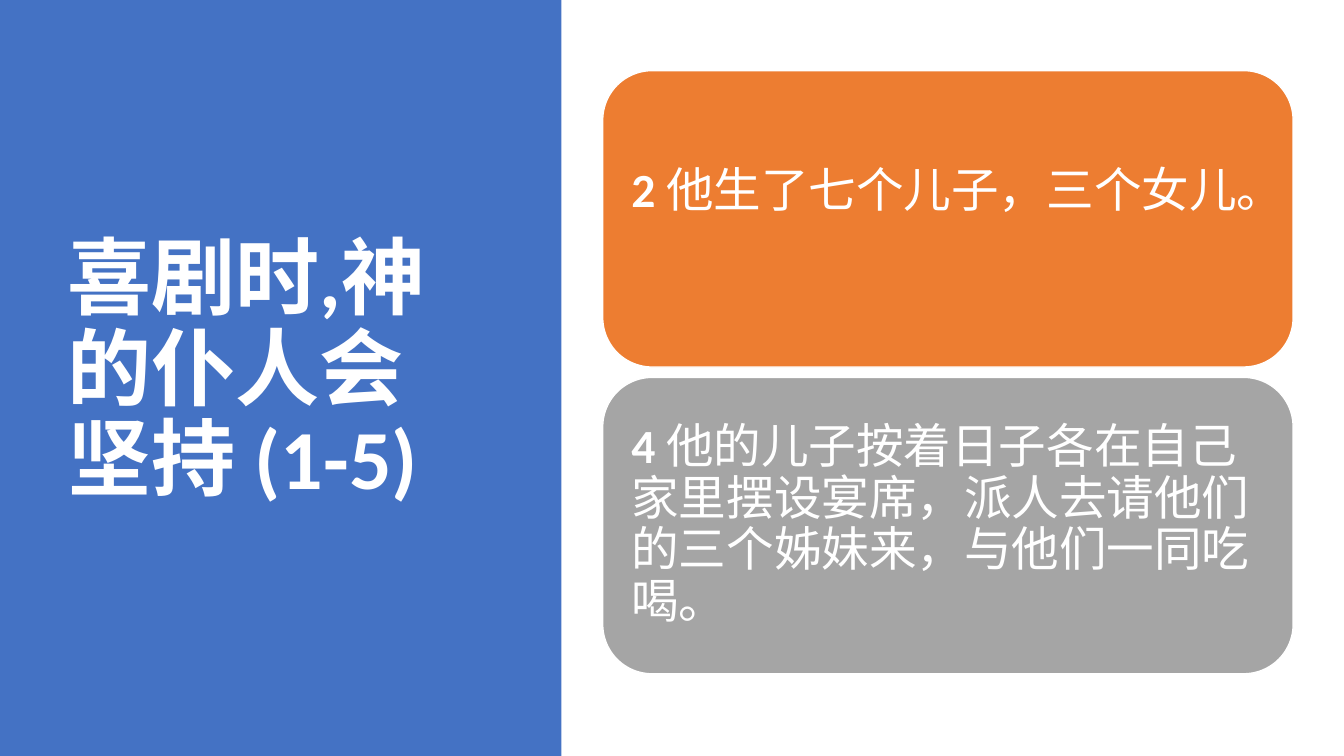
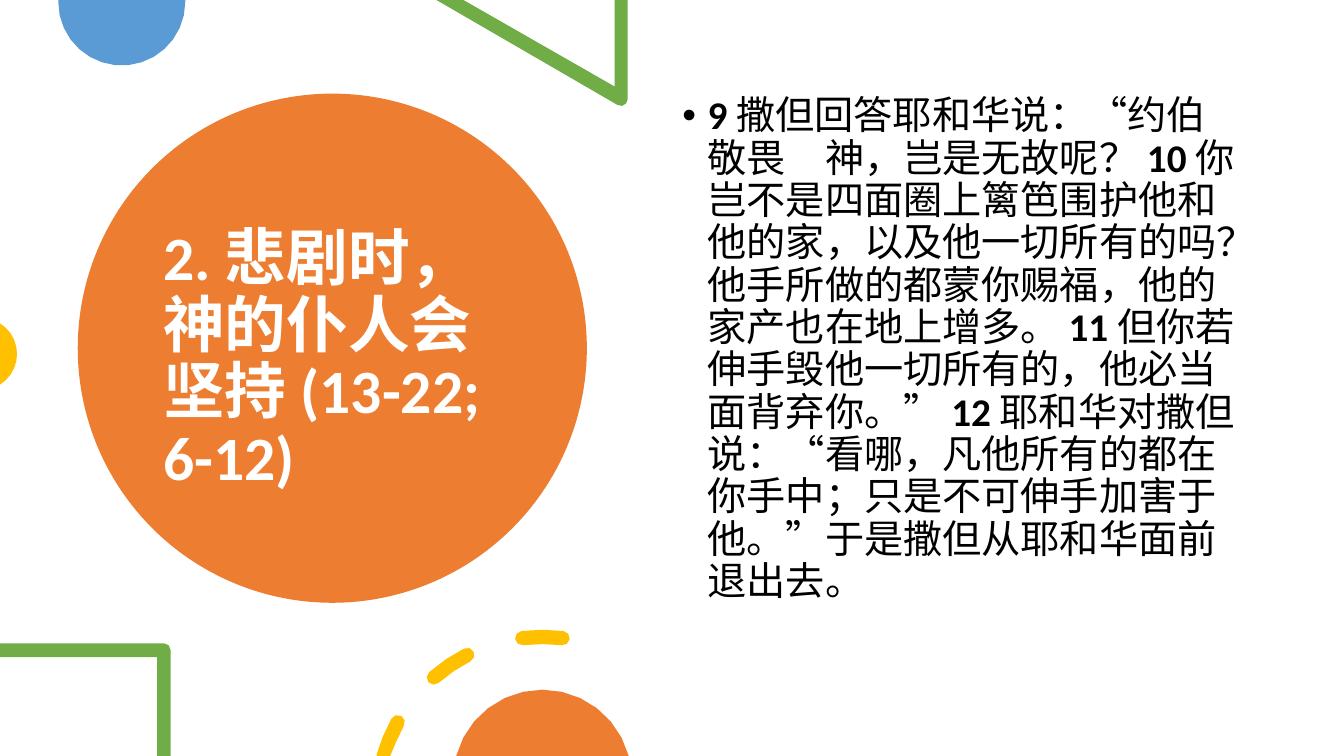
"""Build two slides on how God's servant perseveres in good times and in bad."""
from math import cos, radians, sin

from pptx import Presentation
from pptx.dml.color import RGBColor
from pptx.enum import shapes, text
from pptx.util import Cm, Pt

BLUE, SKY, ORANGE, GREY = "4472C4", "5B9BD5", "ED7D31", "A5A5A5"
GREEN, GOLD, WHITE, BLACK = "70AD47", "FFC000", "FFFFFF", "000000"
WIDTH, HEIGHT = 33.87, 19.05
NO_BREAK_SPACE = chr(160)


def arc(x, y, radius, start, end):
    """Return points along an arc, in degrees clockwise from the right."""
    steps = max(2, round(abs(end - start) / (12 if radius > 0.5 else 45)))
    angles = [radians(start + (end - start) * i / steps) for i in range(steps + 1)]
    return [(x + radius * cos(a), y + radius * sin(a)) for a in angles]


def write(shape, runs, size, colour, **spacing):
    """Fill a shape with one paragraph whose runs alternate bold and regular."""
    frame = shape.text_frame
    frame.word_wrap = True
    frame.auto_size = text.MSO_AUTO_SIZE.NONE
    paragraph = frame.paragraphs[0]
    layout = {"alignment": text.PP_ALIGN.LEFT, "line_spacing": 0.9, **spacing}
    for name, value in layout.items():
        setattr(paragraph, name, value)
    for i, words in enumerate(runs):
        run = paragraph.add_run()
        run.text = words + NO_BREAK_SPACE if words.isdigit() else words
        style = {"name": "Calibri", "size": Pt(size), "bold": i % 2 == 0}
        for name, value in style.items():
            setattr(run.font, name, value)
        run.font.color.rgb = RGBColor.from_string(colour)


deck = Presentation()
deck.slide_width, deck.slide_height = Cm(WIDTH), Cm(HEIGHT)
comedy = deck.slides.add_slide(deck.slide_layouts[5])
tragedy = deck.slides.add_slide(deck.slide_layouts[1])
painted = []

headings = [
    (comedy, shapes.MSO_SHAPE.RECTANGLE, (0, 0, 14.15, HEIGHT), BLUE,
     (1.45, 1.73, 10.57, 15.29), 60, "喜剧时,神的仆人会坚持 (1-5)"),
    (tragedy, shapes.MSO_SHAPE.OVAL, (1.96, 2.36, 12.83, 12.83), ORANGE,
     (3.86, 3.43, 8.99, 11.3), 44, "2. 悲剧时，神的仆人会坚持 (13-22; 6-12)"),
]
for slide, outline, backdrop_box, colour, title_box, size, words in headings:
    backdrop = slide.shapes.add_shape(outline, *map(Cm, backdrop_box))
    painted.append((backdrop, colour, None))
    title = slide.shapes.title
    title.left, title.top, title.width, title.height = map(Cm, title_box)
    title.text_frame.vertical_anchor = text.MSO_ANCHOR.MIDDLE
    write(title, [words], size, WHITE)
    backdrop.element.addnext(title.element)

verses = [
    (ORANGE, 1.72, ["2", "他生了七个儿子，三个女儿。"]),
    (GREY, 0.36, ["4", "他的儿子按着日子各在自己家里摆设宴席，派人去请他们的三个姊妹来，与他们一同吃喝。"]),
]
for i, (colour, bottom, runs) in enumerate(verses):
    card = comedy.shapes.add_shape(
        shapes.MSO_SHAPE.ROUNDED_RECTANGLE,
        Cm(15.19), Cm(1.78 + i * 7.73), Cm(17.4), Cm(7.47))
    painted.append((card, colour, WHITE))
    margins = {"left": 0.36, "top": 0.36, "right": 0.36, "bottom": bottom}
    for side, margin in margins.items():
        setattr(card.text_frame, f"margin_{side}", Cm(margin))
    card.text_frame.vertical_anchor = text.MSO_ANCHOR.MIDDLE
    write(card, runs, 34, WHITE, space_after=Pt(12))

passage = tragedy.placeholders[1]
passage.left, passage.top, passage.width, passage.height = map(Cm, (16.94, 2.29, 14.6, 13.59))
write(passage, [
    "9", "撒但回答耶和华说：“约伯敬畏　神，岂是无故呢？ ",
    "10", "你岂不是四面圈上篱笆围护他和他的家，以及他一切所有的吗？他手所做的都蒙你赐福，他的家产也在地上增多。 ",
    "11", "但你若伸手毁他一切所有的，他必当面背弃你。” ",
    "12", "耶和华对撒但说：“看哪，凡他所有的都在你手中；只是不可伸手加害于他。”于是撒但从耶和华面前退出去。",
], 28, BLACK, space_before=Pt(10))
indents = passage.text_frame.paragraphs[0]._p.get_or_add_pPr()
for name, value in {"marL": Cm(0.64), "indent": -Cm(0.64)}.items():
    indents.set(name, str(value))

ring_x, ring_y, ring_radius, half_stroke = 13.67, 20.22, 4.17, 0.18
dashes = []
for start, end in [(196, 209), (229, 243), (263, 277)]:
    (first_x, first_y), *_, (last_x, last_y) = arc(ring_x, ring_y, ring_radius, start, end)
    dashes.append(arc(ring_x, ring_y, ring_radius + half_stroke, start, end)
                  + arc(last_x, last_y, half_stroke, end, end + 180)
                  + arc(ring_x, ring_y, ring_radius - half_stroke, end, start)
                  + arc(first_x, first_y, half_stroke, start + 180, start + 360))

ornaments = [
    (SKY, [[(1.47, 0), (4.67, 0)] + arc(3.07, 0.05, 1.6, 0, 180)]),
    (GREEN, [[(15.82, 0), (15.49, 0), (15.49, 2.18), (11.68, 0), (11, 0)]
             + arc(15.65, 2.5, 0.17, 120, 0)]),
    (GOLD, [arc(-0.48, 8.92, 0.91, -58, 58)]),
    (GREEN, [[(0, 16.21), (0, 16.56), (3.96, 16.56), (3.96, HEIGHT), (4.3, HEIGHT)]
             + arc(4.13, 16.38, 0.17, 0, -90)]),
    (GOLD, dashes),
    (ORANGE, [arc(13.67, 19.63, 2.25, 195, 345)]),
]
for colour, contours in ornaments:
    builder = None
    for contour in contours:
        corners = [(Cm(max(x, 0)), Cm(min(max(y, 0), HEIGHT))) for x, y in contour]
        if builder is None:
            builder = tragedy.shapes.build_freeform(*corners[0])
        else:
            builder.move_to(*corners[0])
        builder.add_line_segments(corners[1:], close=True)
    painted.append((builder.convert_to_shape(), colour, None))

for shape, colour, border in painted:
    shape.shadow.inherit = False
    shape.fill.solid()
    shape.fill.fore_color.rgb = RGBColor.from_string(colour)
    if border:
        shape.line.color.rgb = RGBColor.from_string(border)
        shape.line.width = Pt(1)
    else:
        shape.line.fill.background()

deck.save("out.pptx")
